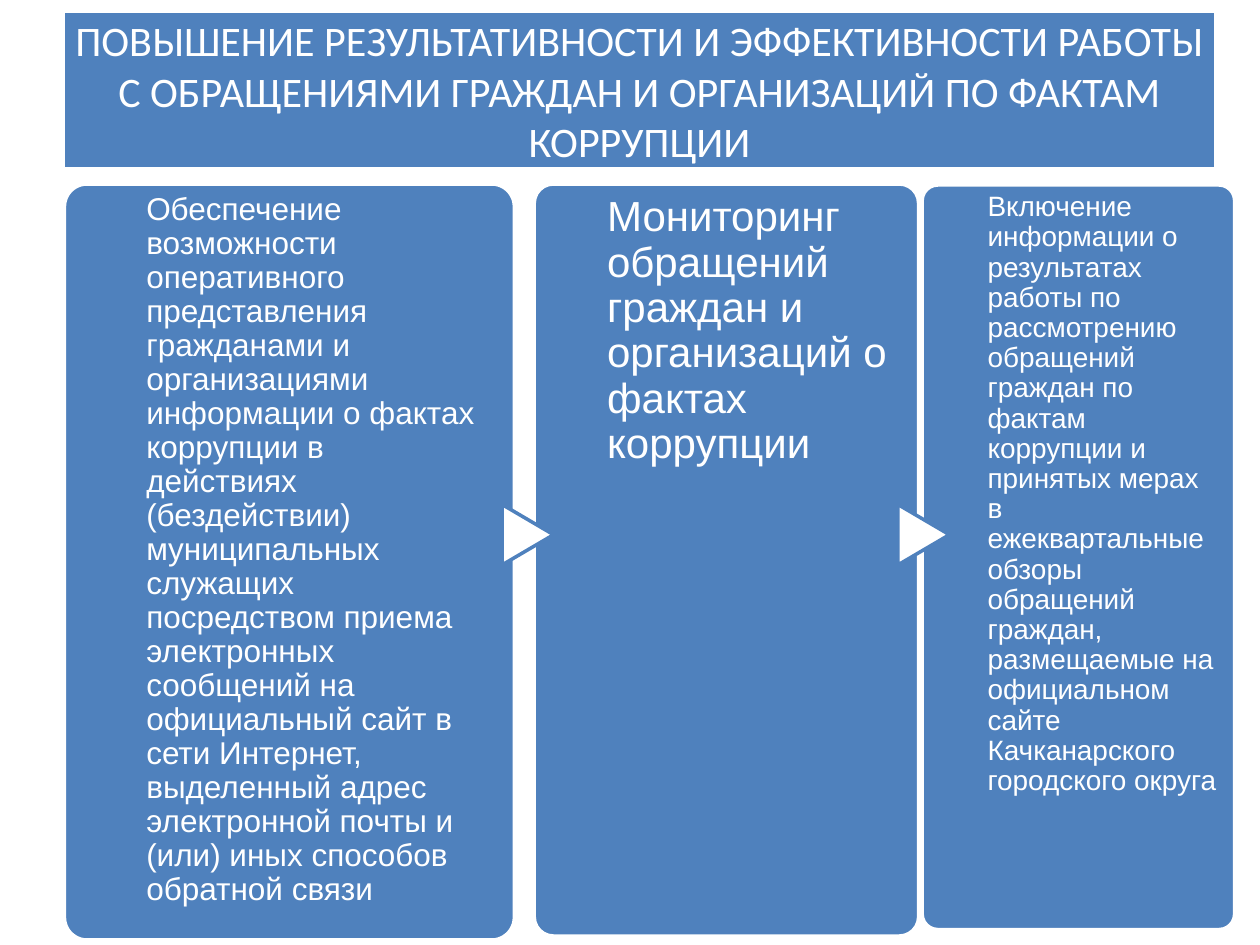
"""Builds a slide with a title bar and three linked step cards."""
from dataclasses import dataclass

from pptx import Presentation as Deck
from pptx.dml.color import RGBColor as Rgb
from pptx.enum.shapes import MSO_SHAPE as Kind
from pptx.enum.text import MSO_ANCHOR as Anchor, PP_ALIGN as Align
from pptx.util import Cm, Pt


@dataclass(frozen=True)
class Theme:
    blue: Rgb = Rgb(0x4F, 0x81, 0xBD)
    white: Rgb = Rgb(0xFF, 0xFF, 0xFF)
    head: str = "Calibri"
    body: str = "Arial"
    title: int = 24
    steps: tuple = (18, 24, 16)
    edge: int = 2


THEME = Theme()
TITLE = ("ПОВЫШЕНИЕ РЕЗУЛЬТАТИВНОСТИ И ЭФФЕКТИВНОСТИ РАБОТЫ С ОБРАЩЕНИЯМИ "
         "ГРАЖДАН И ОРГАНИЗАЦИЙ ПО ФАКТАМ КОРРУПЦИИ")
STEPS = (
    ((1.3, 3.71, 9.07, 15.24), 2.95, 6.76, 0.18,
     "Обеспечение возможности оперативного представления гражданами и "
     "организациями информации о фактах коррупции в действиях (бездействии) "
     "муниципальных служащих посредством приема электронных сообщений на "
     "официальный сайт в сети Интернет, выделенный адрес электронной почты и "
     "(или) иных способов обратной связи"),
    ((10.77, 3.71, 7.75, 15.16), 12.24, 5.77, 0.23,
     "Мониторинг обращений граждан и организаций о фактах коррупции"),
    ((18.59, 3.73, 6.3, 15.01), 19.91, 4.7, 0.15,
     "Включение информации о результатах работы по рассмотрению обращений "
     "граждан по фактам коррупции и принятых мерах в ежеквартальные обзоры "
     "обращений граждан, размещаемые на официальном сайте Качканарского "
     "городского округа"),
)
ARROWS = (None, 10.03, 18.01)


def apply(item, form):
    for name, value in form.items():
        setattr(item, name, value)


def add_form(slide, kind, box, fill, line):
    form = slide.shapes.add_shape(kind, *map(Cm, box))
    form.shadow.inherit = False
    form.fill.solid()
    form.fill.fore_color.rgb = fill
    form.line.color.rgb = line
    form.line.width = Pt(THEME.edge)
    return form


def write(frame, text, font, size, top=0, anchor=Anchor.TOP, **para):
    apply(frame, {"word_wrap": True, "vertical_anchor": anchor,
                  "margin_left": 0, "margin_right": 0,
                  "margin_top": Cm(top), "margin_bottom": 0})
    line = frame.paragraphs[0]
    apply(line, para)
    run = line.add_run()
    run.text = text
    apply(run.font, {"name": font, "size": Pt(size)})
    run.font.color.rgb = THEME.white


def add_title(slide):
    bar = add_form(slide, Kind.RECTANGLE, (1.27, 0.23, 23.24, 3.18),
                   THEME.blue, THEME.white)
    write(bar.text_frame, TITLE, THEME.head, THEME.title,
          anchor=Anchor.MIDDLE, alignment=Align.CENTER)


def add_arrow(slide, left):
    arrow = add_form(slide, Kind.FLOWCHART_EXTRACT, (left, 10.26, 1.22, 1.04),
                     THEME.white, THEME.blue)
    arrow.rotation = 90


def add_step(slide, step, size, arrow):
    box, left, width, top, text = step
    card = add_form(slide, Kind.ROUNDED_RECTANGLE, box, THEME.blue, THEME.white)
    card.adjustments[0] = 0.05
    if arrow:
        add_arrow(slide, arrow)
    area = (left, box[1], width, box[3])
    note = slide.shapes.add_textbox(*map(Cm, area))
    write(note.text_frame, text, THEME.body, size, top,
          alignment=Align.LEFT, line_spacing=0.9)


def main():
    deck = Deck()
    apply(deck, {"slide_width": Cm(25.4), "slide_height": Cm(19.05)})
    slide = deck.slides.add_slide(deck.slide_layouts[6])
    for step, size, arrow in zip(STEPS, THEME.steps, ARROWS):
        add_step(slide, step, size, arrow)
    add_title(slide)
    deck.save("out.pptx")


if __name__ == "__main__":
    main()
